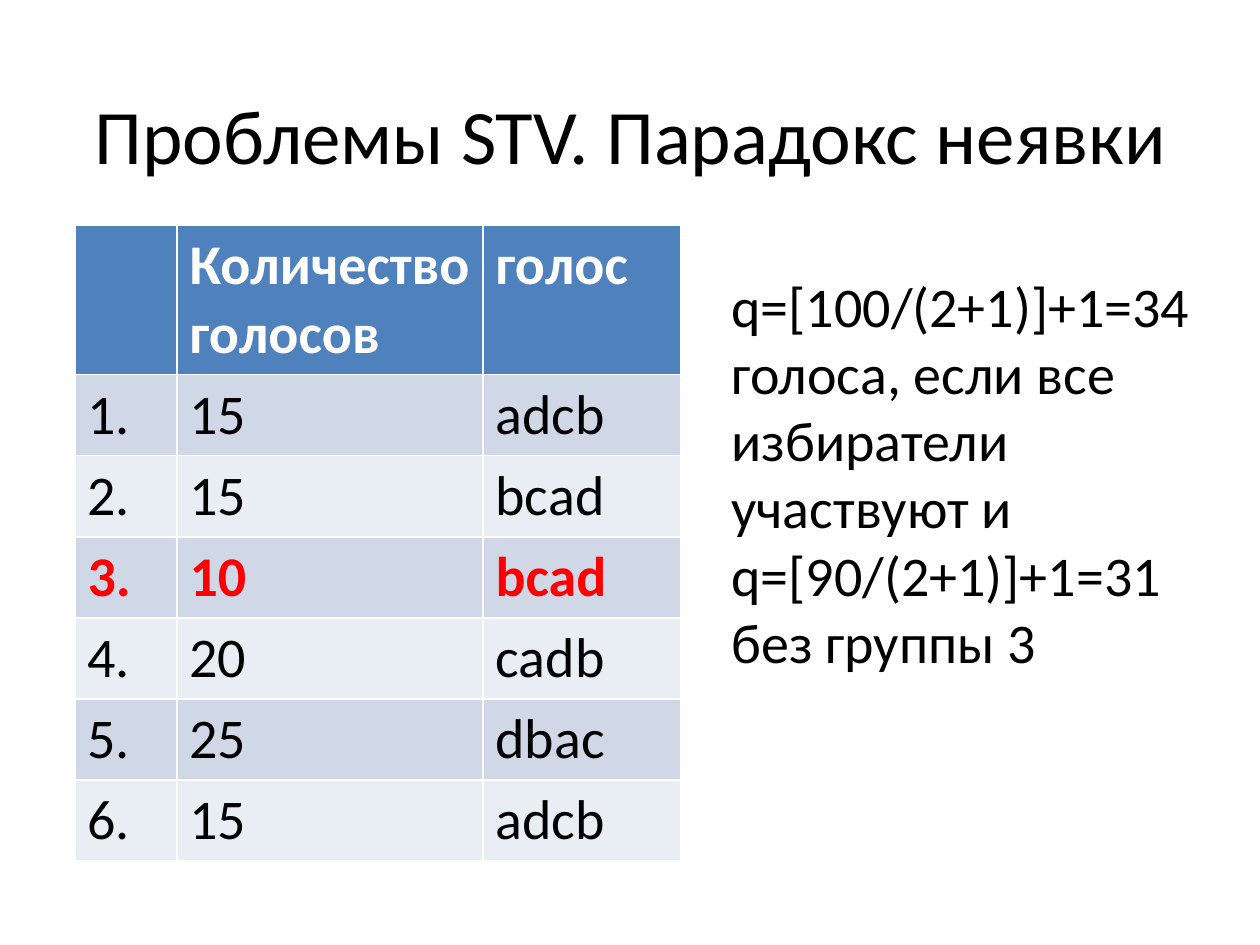
from pptx import Presentation
from pptx.dml.color import RGBColor
from pptx.enum.text import MSO_ANCHOR as Anchor, MSO_AUTO_SIZE as Fit, PP_ALIGN as Align
from pptx.util import Emu, Pt

SCALE = 914400 / 126


def px(*nums):
    return [Emu(round(n * SCALE)) for n in nums]


def style(par, size, color, bold=False):
    font = par.font
    look = {"name": "Calibri", "size": Pt(size), "bold": bold}
    for key, val in look.items():
        setattr(font, key, val)
    font.color.rgb = RGBColor.from_string(color)


prs = Presentation()
prs.slide_width, prs.slide_height = px(1260, 945)
slide = prs.slides.add_slide(prs.slide_layouts[5])

# Title
title = slide.shapes.title
title.left, title.top, title.width, title.height = px(64, 55, 1134, 158)
frame = title.text_frame
frame.text = "Проблемы STV. Парадокс неявки"
frame.vertical_anchor = Anchor.MIDDLE
frame.paragraphs[0].alignment = Align.CENTER
style(frame.paragraphs[0], 44, "000000")

# Table of votes
rows = [
    ("", "Количество голосов", "голос"),
    ("1.", "15", "adcb"),
    ("2.", "15", "bcad"),
    ("3.", "10", "bcad"),
    ("4.", "20", "cadb"),
    ("5.", "25", "dbac"),
    ("6.", "15", "adcb"),
]
absent = 3
widths = px(102, 306, 198)
heights = px(149, *[81] * 6)
table = slide.shapes.add_table(
    len(rows), len(widths), *px(75, 225), sum(widths), sum(heights)
).table
for col, width in zip(table.columns, widths):
    col.width = width

for i, (row, height) in enumerate(zip(rows, heights)):
    table.rows[i].height = height
    if i == 0:
        fill, color = "4F81BD", "FFFFFF"
    else:
        fill = "D0D8E8" if i % 2 else "E9EDF4"
        color = "FF0000" if i == absent else "000000"
    for j, text in enumerate(row):
        cell = table.cell(i, j)
        cell.text = text
        cell.fill.solid()
        cell.fill.fore_color.rgb = RGBColor.from_string(fill)
        style(cell.text_frame.paragraphs[0], 32, color, i in (0, absent))

# Quota note
note = slide.shapes.add_textbox(*px(719, 265, 496, 420)).text_frame
note.word_wrap = True
note.auto_size = Fit.SHAPE_TO_FIT_TEXT
note.text = (
    "q=[100/(2+1)]+1=34 голоса, если все избиратели участвуют и\n"
    "q=[90/(2+1)]+1=31 без группы 3"
)
for par in note.paragraphs:
    style(par, 32, "000000")

prs.save("out.pptx")
